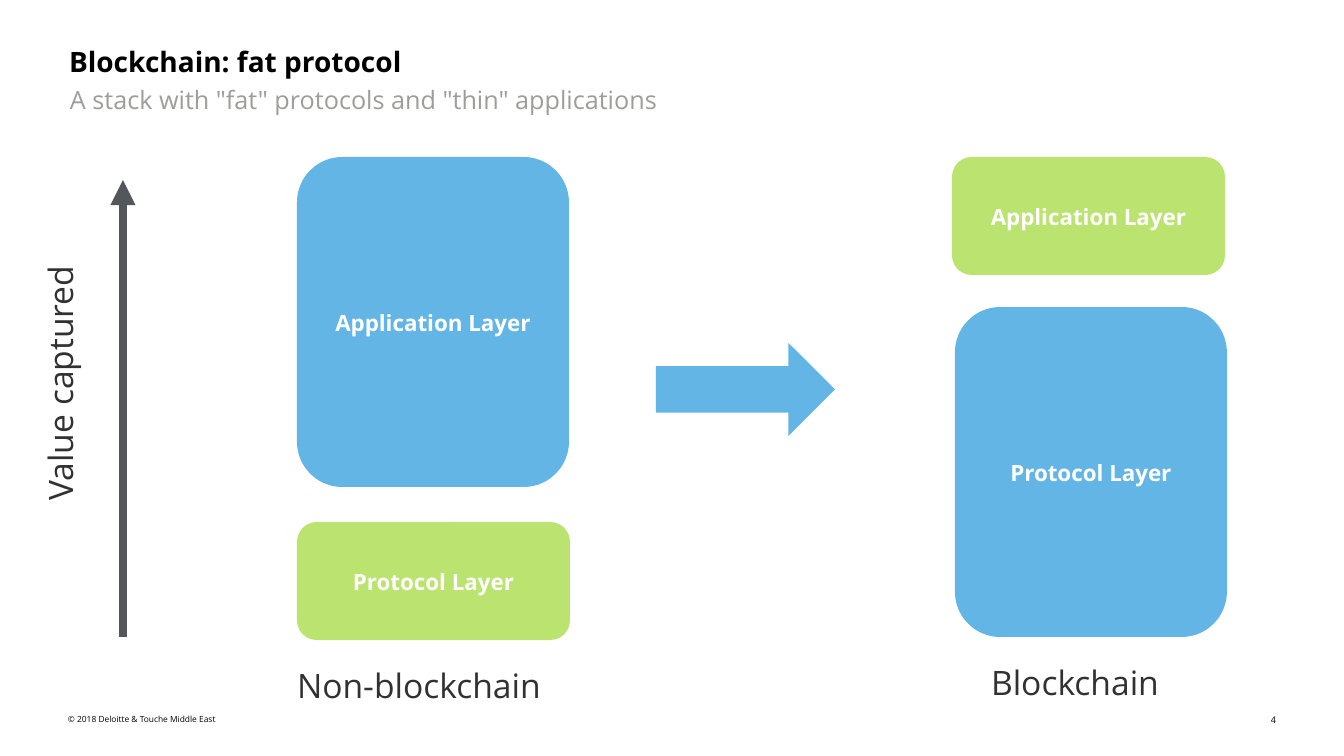
from lxml.etree import SubElement
from pptx import Presentation
from pptx.dml.color import RGBColor
from pptx.enum.shapes import MSO_CONNECTOR, MSO_SHAPE
from pptx.enum.text import MSO_ANCHOR, MSO_AUTO_SIZE, PP_ALIGN
from pptx.oxml.ns import qn
from pptx.util import Pt

PX = 914400 / 100.8
FONT = "Open Sans"
COLORS = {
    "black": "000000", "grey": "9D9D99", "dark": "313131", "axis": "53565A",
    "white": "FFFFFF", "blue": "62B5E5", "green": "BAE370",
}

TITLE = ("Blockchain: fat protocol", (69, 44, 1200, 37), 20, "black")
TEXTS = [
    ('A stack with "fat" protocols and "thin" applications', (70, 84, 1200, 84), 18, "grey", PP_ALIGN.LEFT, 0),
    ("Value captured", (-67, 354, 253, 40), 24, "dark", PP_ALIGN.LEFT, 270),
    ("Non-blockchain", (297, 665, 311, 40), 24, "dark", PP_ALIGN.LEFT, 0),
    ("Blockchain", (991, 662, 276, 40), 24, "dark", PP_ALIGN.LEFT, 0),
    ("© 2018 Deloitte & Touche Middle East", (68, 714, 591, 10), 6, "black", PP_ALIGN.LEFT, 0),
    ("4", (1242, 714, 34, 11), 6.5, "black", PP_ALIGN.RIGHT, 0),
]
LAYER_STYLES = {"fat": (272, 330, "blue"), "thin": (273, 118, "green")}
LAYERS = [
    ("Application Layer", "fat", 297, 157),
    ("Protocol Layer", "thin", 297, 522),
    ("Application Layer", "thin", 952, 157),
    ("Protocol Layer", "fat", 955, 307),
]
ARROW = (656, 343, 179, 93)
AXIS = (123, 637, 123, 180)


def px(*values):
    return [round(v * PX) for v in values]


def rgb(name):
    return RGBColor.from_string(COLORS[name])


def write(sp, text, size, color, align, bold=False, margin=0, anchor=MSO_ANCHOR.TOP):
    tf = sp.text_frame
    tf.word_wrap = True
    tf.auto_size = MSO_AUTO_SIZE.NONE
    tf.vertical_anchor = anchor
    tf.margin_left = tf.margin_top = tf.margin_right = tf.margin_bottom = round(margin * PX)
    tf.text = text
    p = tf.paragraphs[0]
    p.alignment = align
    font = p.runs[0].font
    font.name, font.size, font.bold = FONT, Pt(size), bold
    font.color.rgb = rgb(color)
    return p


def add_block(slide, kind, box, color):
    sp = slide.shapes.add_shape(kind, *px(*box))
    sp.shadow.inherit = False
    sp.fill.solid()
    sp.fill.fore_color.rgb = rgb(color)
    sp.line.fill.background()
    return sp


def add_axis(slide):
    line = slide.shapes.add_connector(MSO_CONNECTOR.STRAIGHT, *px(*AXIS))
    line.line.color.rgb = rgb("axis")
    line.line.width = Pt(6)
    SubElement(line.line._get_or_add_ln(), qn("a:tailEnd"), type="triangle")
    SubElement(line._element.spPr, qn("a:effectLst"))


def main():
    prs = Presentation()
    prs.slide_width, prs.slide_height = px(1344, 756)
    slide = prs.slides.add_slide(prs.slide_layouts[5])

    text, box, size, color = TITLE
    title = slide.shapes.title
    title.left, title.top, title.width, title.height = px(*box)
    write(title, text, size, color, PP_ALIGN.LEFT, bold=True)

    for text, style, x, y in LAYERS:
        w, h, color = LAYER_STYLES[style]
        sp = add_block(slide, MSO_SHAPE.ROUNDED_RECTANGLE, (x, y, w, h), color)
        p = write(sp, text, 16, "white", PP_ALIGN.CENTER, True, 10, MSO_ANCHOR.MIDDLE)
        p.line_spacing = 1.06

    add_block(slide, MSO_SHAPE.RIGHT_ARROW, ARROW, "blue")
    add_axis(slide)

    for text, box, size, color, align, rotation in TEXTS:
        sp = slide.shapes.add_textbox(*px(*box))
        sp.rotation = rotation
        write(sp, text, size, color, align)

    prs.save("out.pptx")


if __name__ == "__main__":
    main()
